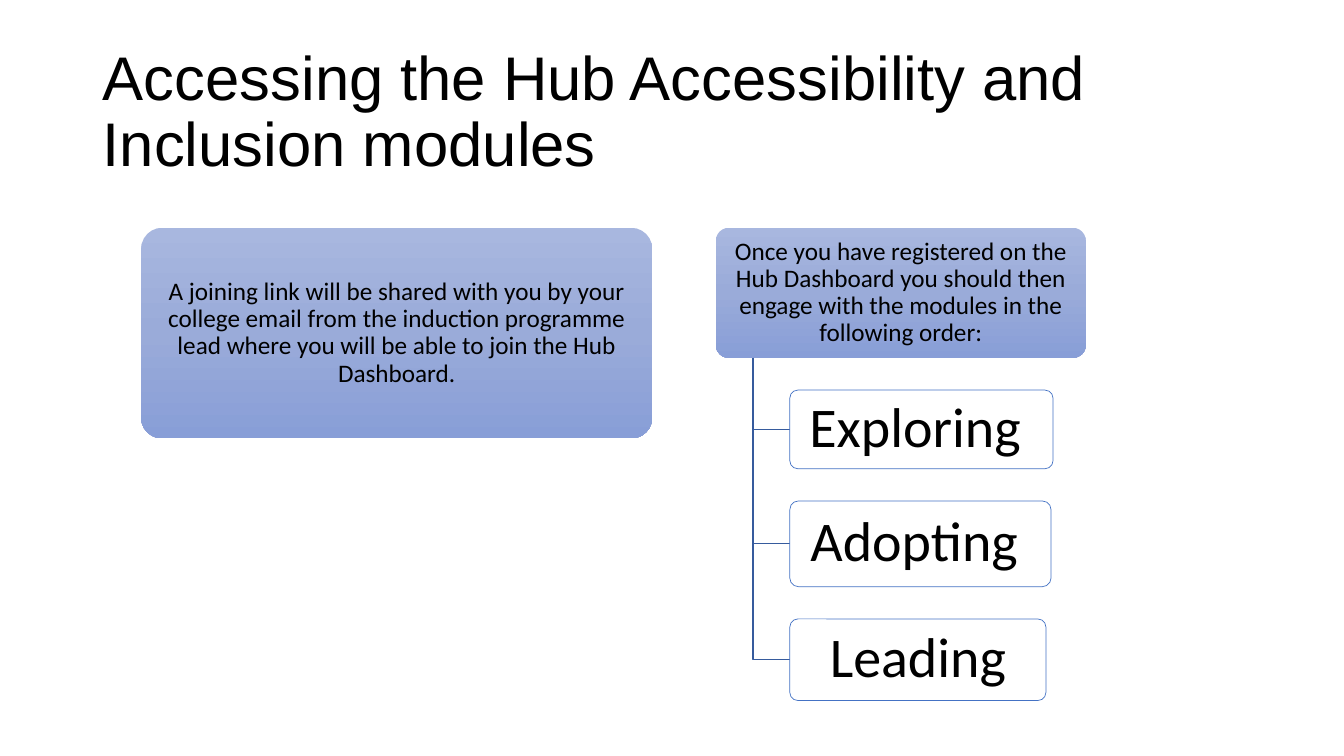
import copy

import pptx
import pptx.dml.color
import pptx.enum.shapes
import pptx.enum.text
import pptx.oxml
import pptx.oxml.ns
import pptx.util

Inches = pptx.util.Inches
Pt = pptx.util.Pt
RGBColor = pptx.dml.color.RGBColor
ALIGN = pptx.enum.text.PP_ALIGN
MIDDLE = pptx.enum.text.MSO_ANCHOR.MIDDLE
ROUND = pptx.enum.shapes.MSO_SHAPE.ROUNDED_RECTANGLE
qn = pptx.oxml.ns.qn

BLACK = RGBColor(0x00, 0x00, 0x00)
WHITE = RGBColor(0xFF, 0xFF, 0xFF)
BLUE = RGBColor(0x44, 0x72, 0xC4)
NAVY = RGBColor(0x36, 0x5B, 0x9D)
SHADES = [RGBColor(0xA8, 0xB7, 0xDF), RGBColor(0x9A, 0xAB, 0xD9),
          RGBColor(0x88, 0x9E, 0xD7)]

LINK = ("A joining link will be shared with you by your college email from "
        "the induction programme lead where you will be able to join the "
        "Hub Dashboard.")
ORDER = ("Once you have registered on the Hub Dashboard you should then "
         "engage with the modules in the following order:")
# Module name, box width, box height
STEPS = [("Exploring ", 2.61, 0.78),
         ("Adopting ", 2.59, 0.85),
         ("Leading", 2.54, 0.81)]
GAP = 0.32


def write(frame, text, font, size, align):
    frame.word_wrap = True
    frame.vertical_anchor = MIDDLE
    para = frame.paragraphs[0]
    para.alignment = align
    para.line_spacing = 0.9
    run = para.add_run()
    run.text = text
    run.font.name = font
    run.font.size = Pt(size)
    run.font.color.rgb = BLACK


def add_box(slide, left, top, width, height, text, size, pad):
    box = slide.shapes.add_shape(ROUND, Inches(left), Inches(top),
                                 Inches(width), Inches(height))
    box.adjustments[0] = 0.1
    box.shadow.inherit = False
    frame = box.text_frame
    frame.margin_left = frame.margin_right = Inches(pad)
    frame.margin_top = frame.margin_bottom = Inches(pad * 0.75)
    write(frame, text, "Calibri", size, ALIGN.CENTER)
    return box


def add_card(slide, left, top, width, height, text):
    card = add_box(slide, left, top, width, height, text, 18, 0.04)
    card.line.fill.background()
    card.fill.gradient()
    card.fill.gradient_angle = 270
    # Third stop for the middle shade
    stops = card._element.spPr.find(qn("a:gradFill")).find(qn("a:gsLst"))
    stops.insert(1, copy.deepcopy(stops[0]))
    for i, stop in enumerate(card.fill.gradient_stops):
        stop.position = i / 2
        stop.color.rgb = SHADES[i]


def add_step(slide, left, top, width, height, text):
    step = add_box(slide, left, top, width, height, text, 40, 0.08)
    step.fill.solid()
    step.fill.fore_color.rgb = WHITE
    color = step._element.spPr.find(qn("a:solidFill"))[0]
    alpha = pptx.oxml.parse_xml(
        '<a:alpha xmlns:a="http://schemas.openxmlformats.org/drawingml/'
        '2006/main" val="90000"/>')
    color.append(alpha)
    step.line.color.rgb = BLUE
    step.line.width = Pt(0.5)


def add_elbow(slide, left, top, right, low):
    pen = slide.shapes.build_freeform(Inches(left), Inches(top))
    pen.add_line_segments([(Inches(left), Inches(low)),
                           (Inches(right), Inches(low))], close=False)
    elbow = pen.convert_to_shape()
    elbow.shadow.inherit = False
    elbow.fill.background()
    elbow.line.color.rgb = NAVY
    elbow.line.width = Pt(1)


def add_title(slide, left, top, width, height, text):
    title = slide.shapes.title
    title.left, title.top = Inches(left), Inches(top)
    title.width, title.height = Inches(width), Inches(height)
    write(title.text_frame, text, "Arial", 44, ALIGN.LEFT)


def add_tree(slide, left, top, width, height):
    add_card(slide, left, top, width, height, ORDER)
    # The trunk and the steps are indented by tenths of the card
    trunk = left + width * 0.1
    edge = left + width * 0.2
    base = top + height
    y = base + GAP
    for name, wide, tall in STEPS:
        add_elbow(slide, trunk, base, edge, y + tall / 2)
        add_step(slide, edge, y, wide, tall, name)
        y += tall + GAP


def main():
    deck = pptx.Presentation()
    deck.slide_width = Inches(13.33)
    deck.slide_height = Inches(7.5)
    slide = deck.slides.add_slide(deck.slide_layouts[5])
    add_title(slide, 0.92, 0.4, 11.5, 1.45,
              "Accessing the Hub Accessibility and Inclusion modules")
    # Joining card on the left, module order on the right
    add_card(slide, 1.4, 2.26, 5.07, 2.09, LINK)
    add_tree(slide, 7.1, 2.26, 3.67, 1.29)
    deck.save("out.pptx")


if __name__ == "__main__":
    main()
